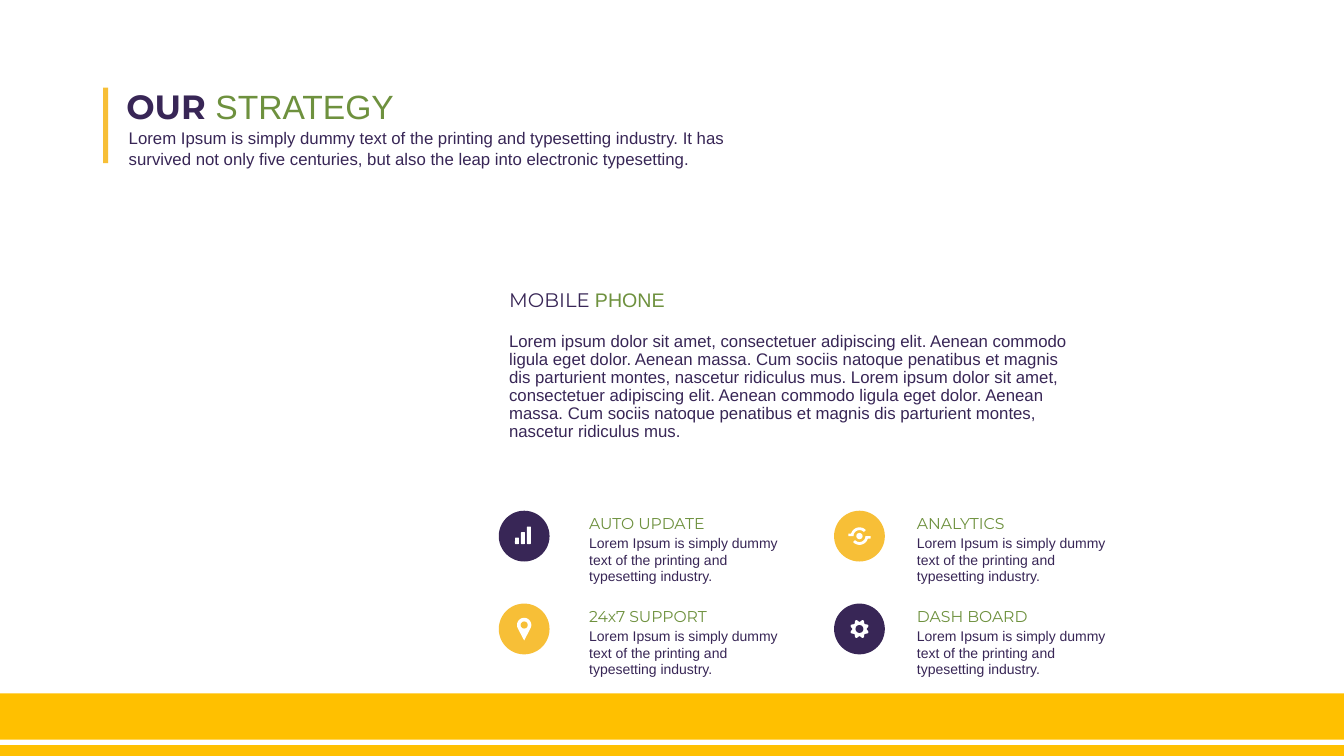
from dataclasses import dataclass
from math import cos, radians, sin
from typing import Callable, NamedTuple

from lxml import etree
from pptx import Presentation
from pptx.dml.color import RGBColor
from pptx.enum.shapes import MSO_SHAPE
from pptx.enum.text import MSO_ANCHOR, MSO_AUTO_SIZE, PP_ALIGN
from pptx.oxml.ns import qn
from pptx.util import Cm, Pt

RECT, ROUND, OVAL = MSO_SHAPE.RECTANGLE, MSO_SHAPE.ROUNDED_RECTANGLE, MSO_SHAPE.OVAL
TOP, LEFT, FIXED = MSO_ANCHOR.TOP, PP_ALIGN.LEFT, MSO_AUTO_SIZE.NONE

PURPLE, GREEN, GOLD, AMBER, WHITE = "382656", "6E913E", "F7BF37", "FFC000", "FFFFFF"
SANS, HEAD = "Arial", "Montserrat"
WIDTH, HEIGHT = 33.87, 19.05

INTRO = (
    "Lorem Ipsum is simply dummy text of the printing and typesetting industry. "
    "It has survived not only five centuries, but also the leap into electronic "
    "typesetting."
)
PHONE = (
    "Lorem ipsum dolor sit amet, consectetuer adipiscing elit. Aenean commodo ligula "
    "eget dolor. Aenean massa. Cum sociis natoque penatibus et magnis dis parturient "
    "montes, nascetur ridiculus mus. Lorem ipsum dolor sit amet, consectetuer "
    "adipiscing elit. Aenean commodo ligula eget dolor. Aenean massa. Cum sociis "
    "natoque penatibus et magnis dis parturient montes, nascetur ridiculus mus."
)
DETAIL = "Lorem Ipsum is simply dummy text of the printing and typesetting industry."


class Box(NamedTuple):
    x: float
    y: float
    w: float
    h: float


class Span(NamedTuple):
    text: str
    size: float
    color: str = PURPLE
    font: str = SANS
    bold: bool = False


Point = tuple[float, float]


@dataclass
class Feature:
    name: str
    fill: str
    icon: Callable


def paint(shape, color: str) -> None:
    shape.shadow.inherit = False
    shape.fill.solid()
    shape.fill.fore_color.rgb = RGBColor.from_string(color)
    shape.line.fill.background()


def block(slide, box: Box, color: str, kind=RECT):
    shape = slide.shapes.add_shape(kind, *map(Cm, box))
    paint(shape, color)
    return shape


def disc(slide, x: float, y: float, r: float, color: str) -> None:
    block(slide, Box(x - r, y - r, 2 * r, 2 * r), color, OVAL)


def outline(slide, x: float, y: float, points: list[Point]) -> None:
    """Draw a closed white outline from points given around (x, y)."""
    spots = [(Cm(x + dx), Cm(y + dy)) for dx, dy in points]
    path = slide.shapes.build_freeform(*spots[0])
    path.add_line_segments(spots[1:], close=True)
    paint(path.convert_to_shape(), WHITE)


def polar(r: float, angle: float) -> Point:
    return r * cos(radians(angle)), r * sin(radians(angle))


def bars(slide, x: float, y: float, fill: str) -> None:
    for i in range(3):
        tall = 0.16 + 0.14 * i
        box = Box(x - 0.23 + 0.15 * i, y + 0.2 - tall, 0.1, tall)
        block(slide, box, WHITE, ROUND)


def eye(slide, x: float, y: float, fill: str) -> None:
    outer = [polar(0.22, a) for a in range(197, 319, 6)]
    inner = [polar(0.15, a) for a in range(318, 179, -6)]
    lid = [(-0.28, -0.06), *outer, *inner, (-0.28, 0)]
    for sign in (1, -1):
        outline(slide, x, y, [(sign * dx, sign * dy) for dx, dy in lid])
    disc(slide, x, y, 0.08, WHITE)


def pin(slide, x: float, y: float, fill: str) -> None:
    y -= 0.1
    outline(slide, x, y, [(0, 0.39), *(polar(0.18, a) for a in range(155, 386, 5))])
    disc(slide, x, y, 0.09, fill)


def gear(slide, x: float, y: float, fill: str) -> None:
    rim = [polar(0.21 - 0.03 * cos(radians(8 * a)), a) for a in range(0, 360, 3)]
    outline(slide, x, y, rim)
    disc(slide, x, y, 0.1, fill)


FEATURES = [
    Feature("AUTO UPDATE", PURPLE, bars),
    Feature("ANALYTICS", GOLD, eye),
    Feature("24x7 SUPPORT", GOLD, pin),
    Feature("DASH BOARD", PURPLE, gear),
]


def write(shape, spans: list[Span], lead: float = 1, wrap: bool = True) -> None:
    frame = shape.text_frame
    frame.word_wrap, frame.auto_size, frame.vertical_anchor = wrap, FIXED, TOP
    para = frame.paragraphs[0]
    if shape.is_placeholder:
        props = para._p.get_or_add_pPr()
        props.set("marL", "0")
        props.set("indent", "0")
        etree.SubElement(props, qn("a:buNone"))
    para.alignment, para.line_spacing, para.space_before = LEFT, lead, Pt(0)
    for span in spans:
        run = para.add_run()
        run.text = span.text
        font = run.font
        font.size, font.name, font.bold = Pt(span.size), span.font, span.bold
        font.color.rgb = RGBColor.from_string(span.color)


def place(shape, box: Box) -> None:
    shape.left, shape.top, shape.width, shape.height = map(Cm, box)


def label(slide, box: Box, spans: list[Span], lead: float = 1) -> None:
    write(slide.shapes.add_textbox(*map(Cm, box)), spans, lead)


def main() -> None:
    deck = Presentation()
    deck.slide_width, deck.slide_height = Cm(WIDTH), Cm(HEIGHT)
    slide = deck.slides.add_slide(deck.slide_layouts[1])

    block(slide, Box(0, 17.47, WIDTH, HEIGHT - 17.47), AMBER)
    block(slide, Box(0, 18.64, WIDTH, 0.13), WHITE)
    block(slide, Box(2.6, 2.21, 0.13, 1.9), GOLD)

    title, body = slide.placeholders
    place(title, Box(2.93, 2.03, 7.42, 1.28))
    write(title, [Span("OUR ", 24, PURPLE, HEAD, True), Span("STRATEGY", 24, GREEN)],
          wrap=False)
    place(body, Box(2.99, 3.1, 17.12, 1.28))
    write(body, [Span(INTRO, 12)])

    label(slide, Box(12.58, 7.19, 8.25, 1.07),
          [Span("MOBILE ", 14, PURPLE, HEAD), Span("PHONE", 14, GREEN)], 0.9)
    label(slide, Box(12.58, 8.26, 14.63, 3.12), [Span(PHONE, 12)], 0.9)

    for i, item in enumerate(FEATURES):
        row, col = divmod(i, 2)
        drop = 2.34 * row
        x, y = 13.21 + 8.45 * col, 13.51 + drop
        disc(slide, x, y, 0.64, item.fill)
        item.icon(slide, x, y, item.fill)
        left = 14.6 + 8.26 * col
        label(slide, Box(left, 12.95 + drop, 4.65, 0.64),
              [Span(item.name, 11.2, GREEN, HEAD)], 0.7)
        label(slide, Box(left, 13.34 + drop, 5.51, 0.99), [Span(DETAIL, 10)])

    deck.save("out.pptx")


if __name__ == "__main__":
    main()
